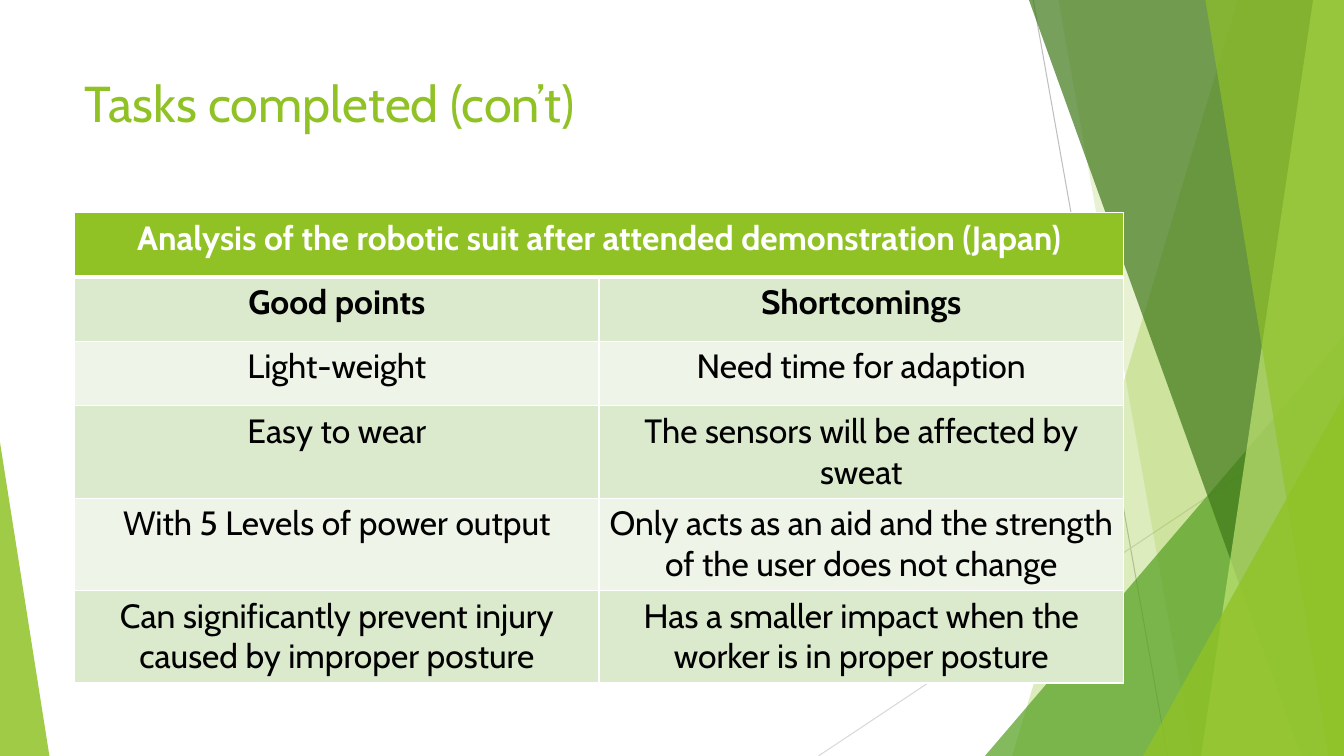
from lxml import etree
from pptx import Presentation
from pptx.dml.color import RGBColor
from pptx.enum import shapes, text
from pptx.oxml import ns
from pptx.util import Pt

WIDE, HIGH = 960, 540
LIME, LEAF, DARK, PALE = "90C226", "54A021", "3F7819", "C0E474"
WHITE, BLACK = "FFFFFF", "000000"
BANDS = ["DBE9CD", "EEF4E8"]

HEAD = "Analysis of the robotic suit after attended demonstration (Japan)"
ROWS = [
    (HEAD, ""),
    ("Good points", "Shortcomings"),
    ("Light-weight", "Need time for adaption"),
    ("Easy to wear", "The sensors will be affected by sweat"),
    ("With 5 Levels of power output",
     "Only acts as an aid and the strength of the user does not change"),
    ("Can significantly prevent injury caused by improper posture",
     "Has a smaller impact when the worker is in proper posture"),
]
HEIGHTS = [46, 46, 46, 66, 66, 66]


def color(code):
    return RGBColor.from_string(code)


def add(parent, tag, **attrs):
    """Append a drawing element such as a:ln to parent."""
    return etree.SubElement(parent, ns.qn(tag), attrs)


class Deck:
    font = "Cabin"

    def __init__(self):
        self.file = Presentation()
        self.file.slide_width, self.file.slide_height = Pt(WIDE), Pt(HIGH)
        self.slide = self.file.slides.add_slide(self.file.slide_layouts[5])
        self.shapes = self.slide.shapes

    def style(self, frame, size, code, align, bold=False):
        for para in frame.paragraphs:
            para.alignment = align
            for run in para.runs:
                run.font.name, run.font.size = self.font, Pt(size)
                run.font.bold = bold
                run.font.color.rgb = color(code)

    def paint(self, shape, code, alpha):
        """Fill a shape with a colour at alpha percent, without a line."""
        shape.shadow.inherit = False
        shape.line.fill.background()
        shape.fill.solid()
        shape.fill.fore_color.rgb = color(code)
        tint = shape._element.spPr.find(".//" + ns.qn("a:srgbClr"))
        add(tint, "a:alpha", val=str(alpha * 1000))

    def line(self, x1, y1, x2, y2, code):
        line = self.shapes.add_connector(
            shapes.MSO_CONNECTOR.STRAIGHT, Pt(x1), Pt(y1), Pt(x2), Pt(y2))
        line.line.color.rgb = color(code)
        line.line.width = Pt(0.75)
        add(line._element.spPr, "a:effectLst")

    def panel(self, top, base, code, alpha):
        """Draw a full-height panel from a slanted left edge to the right."""
        pen = self.shapes.build_freeform(Pt(top), 0)
        pen.add_line_segments([(Pt(WIDE), 0), (Pt(WIDE), Pt(HIGH)),
                               (Pt(base), Pt(HIGH))])
        self.paint(pen.convert_to_shape(), code, alpha)

    def corner(self, x, y, width, apex, code, alpha):
        """Draw a triangle that stands on the bottom edge."""
        shape = self.shapes.add_shape(
            shapes.MSO_SHAPE.ISOSCELES_TRIANGLE,
            Pt(x), Pt(y), Pt(width), Pt(HIGH - y))
        shape.adjustments[0] = apex
        self.paint(shape, code, alpha)

    def title(self, words, x, y, width, height):
        title = self.shapes.title
        title.left, title.top = Pt(x), Pt(y)
        title.width, title.height = Pt(width), Pt(height)
        frame = title.text_frame
        frame.text = words
        frame.word_wrap = True
        frame.auto_size = text.MSO_AUTO_SIZE.NONE
        frame.vertical_anchor = text.MSO_ANCHOR.TOP
        self.style(frame, 36, LIME, text.PP_ALIGN.LEFT)

    def border(self, cell, base):
        """Give a cell white edges, the bottom one base points wide."""
        props = cell._tc.get_or_add_tcPr()
        for side, width in zip("LRTB", (1, 1, 1, base)):
            edge = add(props, "a:ln" + side, w=str(Pt(width)))
            add(add(edge, "a:solidFill"), "a:srgbClr", val=WHITE)

    def table(self, rows, heights, x, y, width):
        count = len(rows[0])
        table = self.shapes.add_table(
            len(rows), count, Pt(x), Pt(y), Pt(width), Pt(sum(heights))).table
        for col in table.columns:
            col.width = Pt(width / count)
        table.cell(0, 0).merge(table.cell(0, count - 1))
        for r, (row, height) in enumerate(zip(rows, heights)):
            table.rows[r].height = Pt(height)
            for c, words in enumerate(row):
                cell = table.cell(r, c)
                self.border(cell, 1 if r else 3)
                cell.fill.solid()
                cell.fill.fore_color.rgb = color(
                    BANDS[(r - 1) % 2] if r else LIME)
                if words:
                    cell.text_frame.text = words
                    self.style(cell.text_frame, 24, BLACK if r else WHITE,
                               text.PP_ALIGN.CENTER, bold=r < 2)


def main():
    deck = Deck()
    deck.line(738, 0, 834, HIGH, "BFBFBF")
    deck.line(WIDE, 290, 584.6, HIGH, "D9D9D9")
    deck.panel(884, 723, LIME, 30)
    deck.panel(756, 852, LIME, 20)
    deck.corner(703.5, 240, 256.5, 1, LEAF, 72)
    deck.panel(735, 929.5, DARK, 70)
    deck.panel(938, 858, PALE, 70)
    deck.panel(861, 949, LIME, 65)
    deck.corner(816.5, 283, 143.5, 1, LIME, 80)
    deck.corner(0, 316, 35.3, 0, LIME, 85)
    deck.title("Tasks completed (con’t)", 53.3, 48, 677, 104)
    deck.table(ROWS, HEIGHTS, 53.3, 152, 749.2)
    deck.file.save("out.pptx")


if __name__ == "__main__":
    main()
